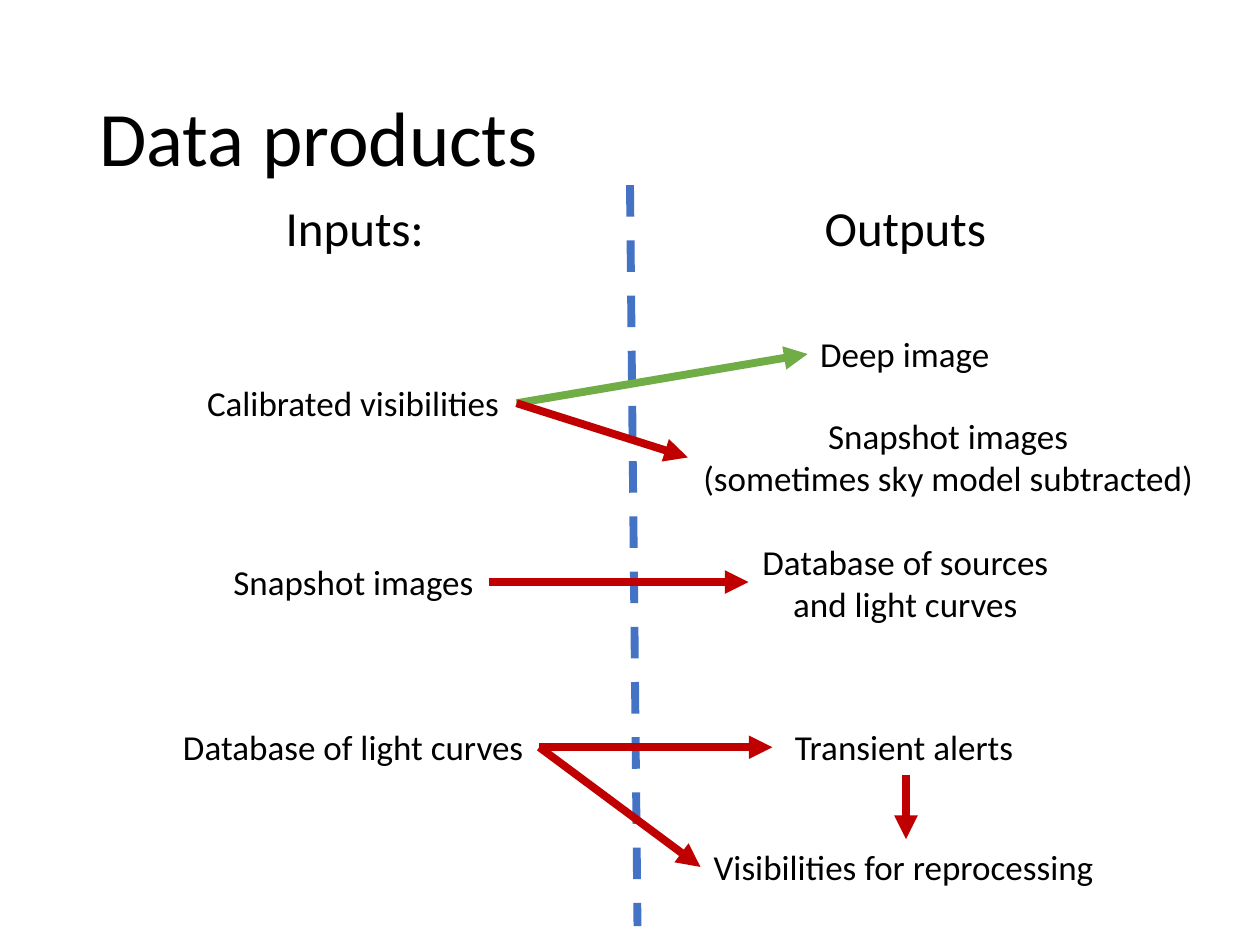
from lxml.etree import SubElement
from pptx import Presentation
from pptx.dml.color import RGBColor
from pptx.enum.dml import MSO_LINE
from pptx.enum.shapes import MSO_CONNECTOR
from pptx.enum.text import MSO_ANCHOR as ANCHOR, MSO_AUTO_SIZE as AUTO, PP_ALIGN as ALIGN
from pptx.oxml.ns import qn
from pptx.util import Pt

BLACK = RGBColor(0x00, 0x00, 0x00)
BLUE = RGBColor(0x44, 0x72, 0xC4)
GREEN = RGBColor(0x70, 0xAD, 0x47)
RED = RGBColor(0xC0, 0x00, 0x00)

FONT = {"name": "Calibri", "size": Pt(20)}
HEADING = {"alignment": ALIGN.CENTER, "line_spacing": 0.9}

INPUTS = [
    ("Calibrated visibilities", 214.6, 183.6),
    ("Snapshot images", 316.8, 153.4),
    ("Database of light curves", 411.1, 211),
]
OUTPUTS = [
    ("Deep image", 186.5, 112.3),
    ("Transient alerts", 411.1, 141.1),
    ("Visibilities for reprocessing", 479.5, 234),
]
ARROWS = [
    (295.2, 230.4, 461.5, 202.3, GREEN),
    (295.2, 230.4, 393.1, 261.4, RED),
    (279.4, 332.6, 427.7, 332.6, RED),
    (308.2, 427, 441.4, 427, RED),
    (517.7, 442.8, 517.7, 479.5, RED),
    (308.2, 427, 400.3, 495.4, RED),
]


def add_text(s, box, text, font=None, para=None, **frame):
    """Write text, one paragraph per line, in a box of (left, top, width, height)."""
    tf = s.shapes.add_textbox(*map(Pt, box)).text_frame
    tf.text = text
    for key, value in {"word_wrap": True, **frame}.items():
        setattr(tf, key, value)
    for p in tf.paragraphs:
        for key, value in (para or {}).items():
            setattr(p, key, value)
        for r in p.runs:
            r.font.color.rgb = BLACK
            for key, value in {**FONT, **(font or {})}.items():
                setattr(r.font, key, value)


def add_line(s, x1, y1, x2, y2, color, arrow=True):
    """Draw a thick line, with an arrowhead at its end if wanted."""
    line = s.shapes.add_connector(MSO_CONNECTOR.STRAIGHT, *map(Pt, (x1, y1, x2, y2)))
    line.line.color.rgb = color
    line.line.width = Pt(4.5)
    if arrow:
        SubElement(line.line._get_or_add_ln(), qn("a:tailEnd"), type="triangle")
    SubElement(line._element.spPr, qn("a:effectLst"))
    return line


def add_header(s, left, top, width):
    """Place the title and the two column headings."""
    add_text(s, (left, top, width, 104.4), "Data products", {"size": Pt(44)},
             {"line_spacing": 0.9}, vertical_anchor=ANCHOR.MIDDLE)
    column = 306
    for x, text in ((left, "Inputs:"), (left + width - column, "Outputs")):
        add_text(s, (x, top + 84.2, column, 39.6), text, {"size": Pt(28)}, HEADING)


def add_labels(s, center, labels):
    """Place a column of one-line labels around a shared center."""
    for text, top, width in labels:
        add_text(s, (center - width / 2, top, width, 31.7), text,
                 word_wrap=False, auto_size=AUTO.SHAPE_TO_FIT_TEXT)


def add_flow(s):
    """Place the labels, the divider and the arrows of the flow."""
    centered = {"alignment": ALIGN.CENTER}
    add_labels(s, 203, INPUTS)
    add_labels(s, 517.7, OUTPUTS)
    add_text(s, (393.1, 233.3, 297.4, 55.4),
             "Snapshot images\n(sometimes sky model subtracted)",
             para=centered, word_wrap=False, auto_size=AUTO.SHAPE_TO_FIT_TEXT)
    add_text(s, (427.7, 305.3, 179.3, 55.4), "Database of sources and light curves",
             para=centered, auto_size=AUTO.SHAPE_TO_FIT_TEXT)
    divider = add_line(s, 360, 105.8, 364.3, 529.2, BLUE, arrow=False)
    divider.line.dash_style = MSO_LINE.DASH
    for arrow in ARROWS:
        add_line(s, *arrow)


def main():
    """Build and save the slide."""
    prs = Presentation()
    prs.slide_width, prs.slide_height = Pt(720), Pt(540)
    s = prs.slides.add_slide(prs.slide_layouts[6])
    add_header(s, 49.7, 28.8, 620.6)
    add_flow(s)
    prs.save("out.pptx")


if __name__ == "__main__":
    main()
